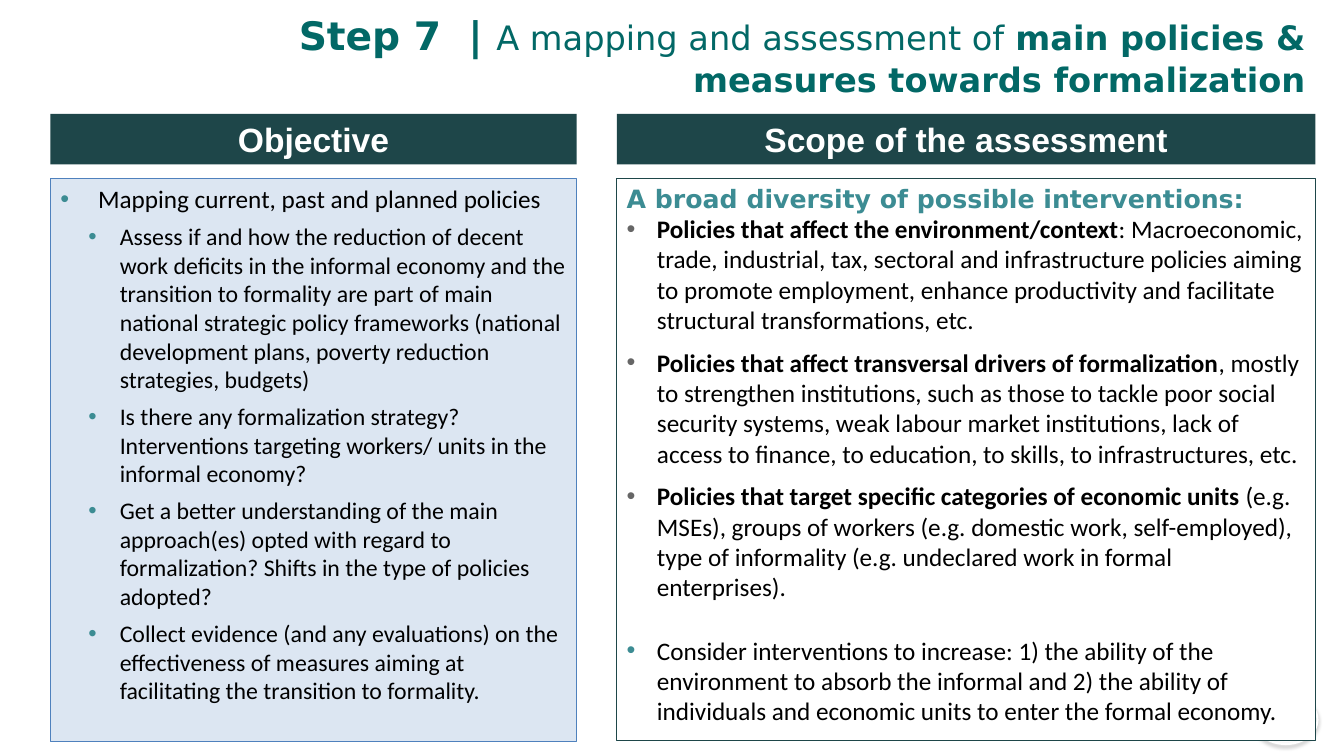
"""Build the Step 7 slide on mapping policies towards formalization."""
from lxml.etree import SubElement
from pptx import Presentation
from pptx.dml.color import RGBColor
from pptx.enum.shapes import MSO_SHAPE as Shape
from pptx.enum.text import MSO_ANCHOR as Anchor, PP_ALIGN as Align
from pptx.oxml.ns import qn
from pptx.util import Pt

THEME = {
    "title": "026866", "dark": "1E4649", "teal": "3C8C93", "grey": "666666",
    "pale": "DCE6F2", "blue": "4F81BD", "white": "FFFFFF", "black": "000000",
    "body": "Calibri", "head": "Arial", "wide": "DejaVu Sans",
    "step": 28, "large": 24, "text": 18, "small": 17,
}
T = THEME

TITLE = [
    ("Step 7  | ", "step", True),
    ("A mapping and assessment of ", "large", False),
    ("main policies & measures towards formalization", "large", True),
]
GOAL = "Mapping current, past and planned policies"
TASKS = [
    "Assess if and how the reduction of decent work deficits in the informal economy and the "
    "transition to formality are part of main national strategic policy frameworks (national "
    "development plans, poverty reduction strategies, budgets)",
    "Is there any formalization strategy? Interventions targeting workers/ units in the "
    "informal economy?",
    "Get a better understanding of the main approach(es) opted with regard to formalization? "
    "Shifts in the type of policies adopted?",
    "Collect evidence (and any evaluations) on the effectiveness of measures aiming at "
    "facilitating the transition to formality.",
]
LEAD = "A broad diversity of possible interventions:"
SCOPE = [
    ("Policies that affect the environment/context",
     ": Macroeconomic, trade, industrial, tax, sectoral and infrastructure policies aiming to "
     "promote employment, enhance productivity and facilitate structural transformations, etc."),
    ("Policies that affect transversal drivers of formalization",
     ", mostly to strengthen institutions, such as those to tackle poor social security systems, "
     "weak labour market institutions, lack of access to finance, to education, to skills, to "
     "infrastructures, etc."),
    ("Policies that target specific categories of economic units ",
     "(e.g. MSEs), groups of workers (e.g. domestic work, self-employed), type of informality "
     "(e.g. undeclared work in formal enterprises)."),
]
NOTE = ("Consider interventions to increase: 1) the ability of the environment to absorb the "
        "informal and 2) the ability of individuals and economic units to enter the formal economy.")
COLS = [
    ("Objective", 36, 376, 402.5, "pale", "blue", 0.75),
    ("Scope of the assessment", 440.6, 499, 401.8, "white", "dark", 0.5),
]
HEAD_Y, HEAD_H, GAP = 81.4, 36, 10


def rgb(name):
    return RGBColor.from_string(T[name])


def add_box(slide, kind, place, fill=None, line=None, width=0):
    box = slide.shapes.add_shape(kind, *map(Pt, place))
    box.shadow.inherit = False
    if fill:
        box.fill.solid()
        box.fill.fore_color.rgb = rgb(fill)
    else:
        box.fill.background()
    if line:
        box.line.color.rgb = rgb(line)
        box.line.width = Pt(width)
    else:
        box.line.fill.background()
    return box


def set_frame(shape, anchor=Anchor.TOP):
    frame = shape.text_frame
    frame.word_wrap = True
    frame.vertical_anchor = anchor
    return frame


def add_para(frame, runs, align=Align.LEFT, before=0, after=0, bullet=None, left=0, hang=0):
    para = frame.paragraphs[0]
    if para.runs:
        para = frame.add_paragraph()
    para.alignment = align
    para.space_before, para.space_after = Pt(before), Pt(after)
    for text, size, face, color, bold in runs:
        run = para.add_run()
        run.text = text
        font = run.font
        font.size, font.name, font.bold = Pt(T[size]), T[face], bold
        font.color.rgb = rgb(color)
    if bullet:
        props = para._p.get_or_add_pPr()
        props.set("marL", str(Pt(left)))
        props.set("indent", str(-Pt(hang)))
        tint = SubElement(props, qn("a:buClr"))
        SubElement(tint, qn("a:srgbClr"), val=T[bullet])
        SubElement(props, qn("a:buFont"), typeface=T["head"])
        SubElement(props, qn("a:buChar"), char="•")


def add_disc(slide):
    disc = add_box(slide, Shape.OVAL, (895.7, 496.8, 45.4, 34.6), None, "white", 1.5)
    effect = disc._element.spPr.find(qn("a:effectLst"))
    shade = SubElement(effect, qn("a:outerShdw"), blurRad=str(Pt(3.1)), dist=str(Pt(1.8)),
                       dir="5400000", rotWithShape="0")
    tint = SubElement(shade, qn("a:srgbClr"), val=T["black"])
    SubElement(tint, qn("a:alpha"), val="35000")


def main():
    deck = Presentation()
    deck.slide_width, deck.slide_height = Pt(960), Pt(540)
    slide = deck.slides.add_slide(deck.slide_layouts[6])
    add_disc(slide)

    title = slide.shapes.add_textbox(*map(Pt, (189.4, 1.4, 750.2, 76.3)))
    add_para(set_frame(title, Anchor.MIDDLE),
             [(text, size, "wide", "title", bold) for text, size, bold in TITLE], Align.RIGHT)

    panels = []
    for name, x, wide, high, fill, line, width in COLS:
        top = HEAD_Y + HEAD_H + GAP
        panel = add_box(slide, Shape.RECTANGLE, (x, top, wide, high), fill, line, width)
        panels.append(set_frame(panel))
        head = add_box(slide, Shape.RECTANGLE, (x, HEAD_Y, wide, HEAD_H), "dark")
        add_para(set_frame(head, Anchor.MIDDLE),
                 [(name, "large", "head", "white", True)], Align.CENTER)

    goals, scope = panels
    add_para(goals, [(GOAL, "text", "body", "black", False)],
             before=6, bullet="teal", left=27, hang=27)
    for task in TASKS:
        add_para(goals, [(task, "small", "body", "black", False)],
                 before=6, bullet="teal", left=42.5, hang=22.5)

    add_para(scope, [(LEAD, "text", "wide", "teal", True)])
    for key, rest in SCOPE:
        add_para(scope, [(key, "text", "body", "black", True),
                         (rest, "text", "body", "black", False)],
                 after=9, bullet="grey", left=21.6, hang=21.6)

    note = slide.shapes.add_textbox(*map(Pt, (COLS[1][1], 450, 491.8, 72.7)))
    add_para(set_frame(note), [(NOTE, "text", "body", "black", False)],
             after=9, bullet="teal", left=21.6, hang=21.6)
    deck.save("out.pptx")


if __name__ == "__main__":
    main()
